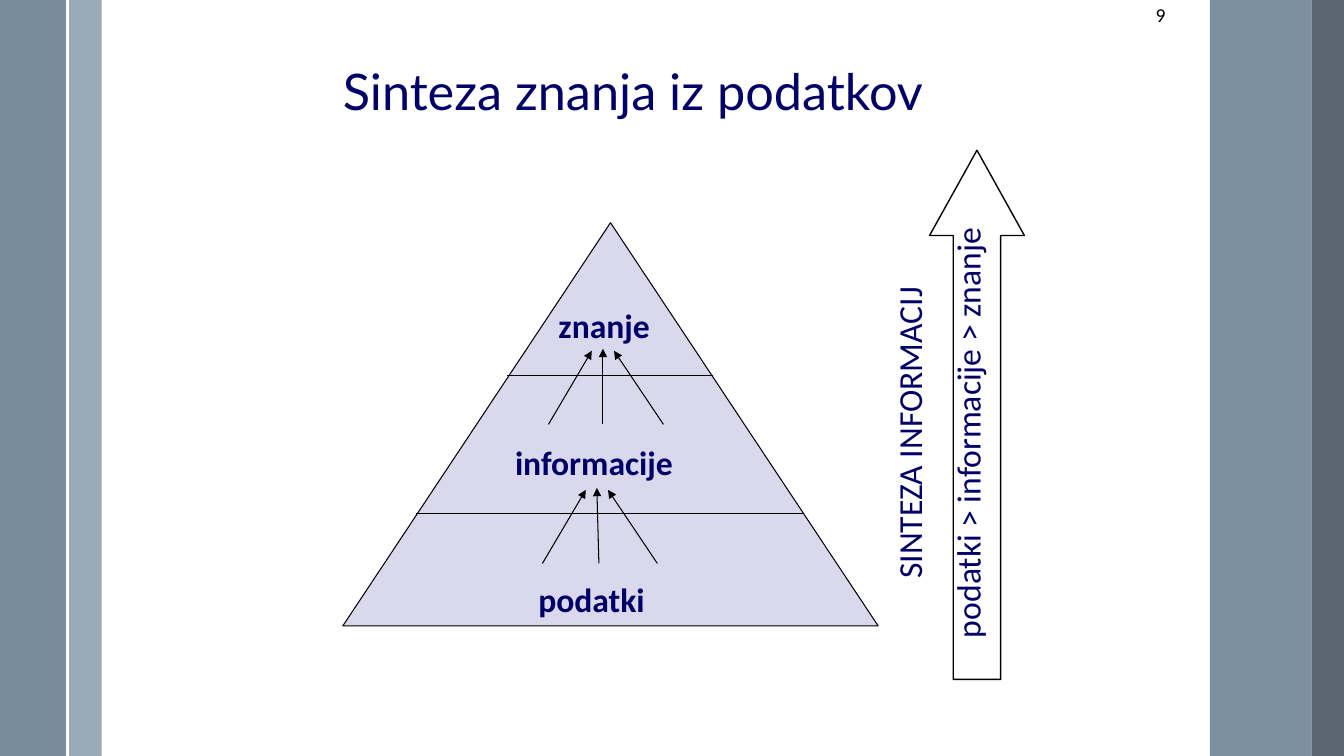
from lxml import etree
from pptx import Presentation
from pptx import util as u
from pptx.dml.color import RGBColor
from pptx.enum import shapes, text
from pptx.oxml.ns import qn

NAVY, BLACK, WHITE = "000066", "000000", "FFFFFF"
SHAPE, ALIGN = shapes.MSO_SHAPE, text.PP_ALIGN


def px(n):
    """100 px to the inch."""
    return u.Emu(n * 9144)


def color(hex_code):
    return RGBColor.from_string(hex_code)


def add_shape(s, kind, box, fill=None, alpha=100, line=None, line_pt=1, adj=()):
    sp = s.shapes.add_shape(kind, *map(px, box))
    sp.shadow.inherit = False
    for i, value in enumerate(adj):
        sp.adjustments[i] = value
    if fill:
        sp.fill.solid()
        sp.fill.fore_color.rgb = color(fill)
        if alpha < 100:
            clr = sp.fill._xPr.find(".//" + qn("a:srgbClr"))
            etree.SubElement(clr, qn("a:alpha"), val=str(alpha * 1000))
    else:
        sp.fill.background()
    if line:
        sp.line.color.rgb = color(line)
        sp.line.width = u.Pt(line_pt)
    else:
        sp.line.fill.background()
    return sp


def add_line(s, start, end, hex_code=BLACK, width=0.75, arrow=False):
    c = s.shapes.add_connector(shapes.MSO_CONNECTOR.STRAIGHT, *map(px, start + end))
    c.line.color.rgb = color(hex_code)
    c.line.width = u.Pt(width)
    if arrow:
        etree.SubElement(c.line._get_or_add_ln(), qn("a:tailEnd"), type="triangle")
    etree.SubElement(c._element.spPr, qn("a:effectLst"))
    return c


def format_paragraph(p, size, font="Calibri", hex_code=NAVY, bold=False,
                     align=ALIGN.LEFT, spacing=0.93):
    p.alignment = align
    p.line_spacing = spacing
    p.space_before = u.Pt(0)
    p.font.size = u.Pt(size)
    p.font.name = font
    p.font.bold = bold
    p.font.color.rgb = color(hex_code)


def add_text(s, box, lines, size=24, gap=15, rotation=0, **style):
    sp = s.shapes.add_textbox(*map(px, box))
    sp.rotation = rotation
    tf = sp.text_frame
    tf.word_wrap = True
    for i, line in enumerate(lines):
        p = tf.paragraphs[0] if i == 0 else tf.add_paragraph()
        p.text = line
        format_paragraph(p, size, **style)
        if i:
            p.space_before = u.Pt(gap)
    return sp


def set_title(s, box, title):
    sp = s.shapes.title
    sp.left, sp.top, sp.width, sp.height = map(px, box)
    tf = sp.text_frame
    tf.text = title
    tf.word_wrap = True
    tf.auto_size = text.MSO_AUTO_SIZE.NONE
    tf.vertical_anchor = text.MSO_ANCHOR.BOTTOM
    format_paragraph(tf.paragraphs[0], 36, font="Lato", spacing=0.9)


def add_side_bands(s):
    for left, width, fill, alpha in ((68, 33, "9BAAB7", 100), (0, 67, "6A8093", 90),
                                     (1200, 101, "6A8093", 87), (1301, 33, "475562", 90)):
        add_shape(s, SHAPE.RECTANGLE, (left, 0, width, 750), fill, alpha)
    add_line(s, (67, 0), (67, 750), WHITE, 1.5)


def add_pyramid(s):
    add_shape(s, SHAPE.ISOSCELES_TRIANGLE, (340, 221, 531, 400), "D9D8EC",
              line=BLACK, line_pt=0.75)
    # Level dividers
    for left, right, y in ((503, 707, 373), (413, 797, 509)):
        add_line(s, (left, y), (right, y))
    # Level names
    for label, left, top, width in (("podatki", 524, 573, 148),
                                    ("informacije", 501, 437, 216),
                                    ("znanje", 544, 301, 135)):
        add_text(s, (left, top, width, 48), [label], bold=True)
    # Three converging arrows between neighbouring levels
    for x, y, middle in ((544, 421, 54), (538, 559, 56)):
        for start, tip, rise in ((0, 43, 73), (middle, 54, 75), (114, 65, 73)):
            add_line(s, (x + start, y), (x + tip, y - rise), arrow=True)


def add_synthesis_arrow(s):
    add_text(s, (614, 376, 639, 107),
             ["SINTEZA INFORMACIJ", "podatki > informacije > znanje"],
             rotation=270, align=ALIGN.CENTER)
    add_shape(s, SHAPE.UP_ARROW, (922, 149, 94, 525), line=BLACK, adj=(0.5, 0.9))


def main():
    prs = Presentation()
    prs.slide_width, prs.slide_height = u.Inches(13.33), u.Inches(7.5)
    s = prs.slides.add_slide(prs.slide_layouts[5])
    s.background.fill.solid()
    s.background.fill.fore_color.rgb = color(WHITE)

    add_side_bands(s)
    add_text(s, (933, 0, 233, 50), ["9"], size=14, hex_code=BLACK, align=ALIGN.RIGHT)
    set_title(s, (330, 30, 837, 95), "Sinteza znanja iz podatkov")
    add_synthesis_arrow(s)
    add_pyramid(s)
    prs.save("out.pptx")


if __name__ == "__main__":
    main()
